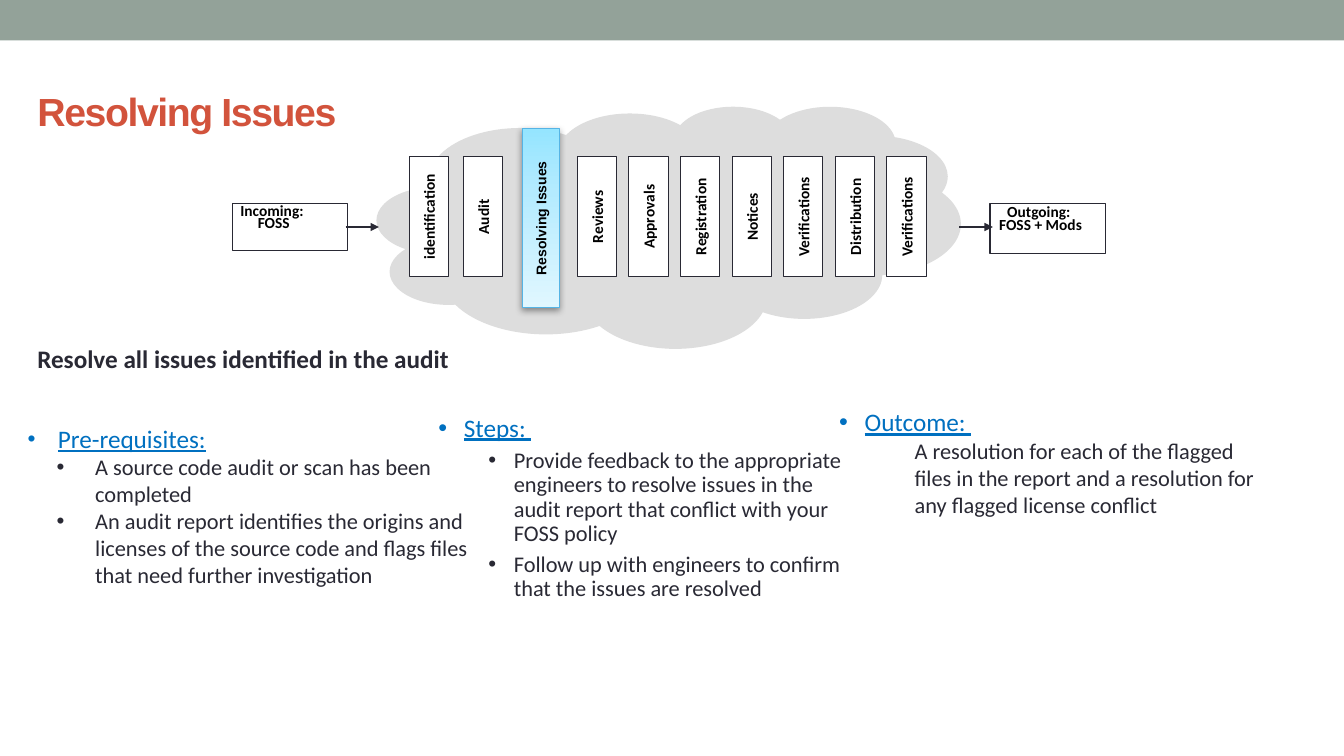
from copy import deepcopy
from lxml.etree import SubElement
from pptx import Presentation
from pptx.dml.color import RGBColor
from pptx.enum.shapes import MSO_CONNECTOR, MSO_SHAPE
from pptx.enum.text import MSO_ANCHOR, PP_ALIGN
from pptx.oxml.ns import qn
from pptx.util import Cm, Pt

HUES = {"band": "93A299", "cloud": "DDDDDD", "white": "FFFFFF", "ink": "292934",
        "black": "000000", "head": "D2533C", "blue": "0070C0", "edge": "55B4E5"}
GLOW = [(0, "95E5FF"), (0.35, "B4EBFF"), (1, "E0F7FF")]
STEPS = ["Reviews", "Approvals", "Registration", "Notices",
         "Verifications", "Distribution", "Verifications"]

HEAD = {"size": Pt(18), "underline": True}
BODY = {"size": Pt(16)}
LABEL = {"size": Pt(11), "bold": True}


def hue(name):
    return RGBColor.from_string(HUES[name])


def dress(item, values):
    """Set each named attribute of the item."""
    for name, value in values.items():
        setattr(item, name, value)


def write(para, text, color, font):
    run = para.add_run()
    run.text = text
    dress(run.font, {"name": "Calibri", **font})
    run.font.color.rgb = hue(color)
    return run


def draw(shapes, kind, box, fill, line=None):
    shape = shapes.add_shape(kind, *map(Cm, box))
    shape.shadow.inherit = False
    shape.fill.solid()
    shape.fill.fore_color.rgb = hue(fill)
    if line:
        shape.line.color.rgb = hue(line)
        shape.line.width = Pt(0.75)
    else:
        shape.line.fill.background()
    return shape


def add_bar(shapes, box, text, line="ink", font=LABEL):
    """Draw a box whose label reads upwards."""
    bar = draw(shapes, MSO_SHAPE.RECTANGLE, box, "white", line)
    frame = bar.text_frame
    dress(frame, {"margin_left": 0, "margin_right": 0, "margin_top": 0,
                  "margin_bottom": 0, "word_wrap": False,
                  "vertical_anchor": MSO_ANCHOR.MIDDLE})
    frame._txBody.bodyPr.set("vert", "vert270")
    para = frame.paragraphs[0]
    para.alignment = PP_ALIGN.CENTER
    write(para, text, "black", font)
    return bar


def light(bar):
    """Give the current step its gradient and shadow."""
    bar.fill.gradient()
    bar.fill.gradient_angle = 270
    stops = bar._element.spPr.find(qn("a:gradFill")).find(qn("a:gsLst"))
    stops.insert(1, deepcopy(stops[0]))
    for stop, (place, color) in zip(bar.fill.gradient_stops, GLOW):
        stop.position = place
        stop.color.rgb = RGBColor.from_string(color)
    cast = SubElement(bar._element.spPr.find(qn("a:effectLst")), qn("a:outerShdw"),
                      blurRad=str(Pt(5)), dist=str(Pt(1.6)), dir="5400000", rotWithShape="0")
    shade = SubElement(cast, qn("a:srgbClr"), val=HUES["black"])
    SubElement(shade, qn("a:alpha"), val="38000")


def add_end(shapes, box, lines, space, left, right):
    """Draw the box at one end of the flow."""
    frame = draw(shapes, MSO_SHAPE.RECTANGLE, box, "white", "ink").text_frame
    dress(frame, {"margin_left": Cm(left), "margin_right": Cm(right), "margin_top": Cm(0.1),
                  "word_wrap": True, "vertical_anchor": MSO_ANCHOR.TOP})
    for i, text in enumerate(lines):
        para = frame.add_paragraph() if i else frame.paragraphs[0]
        dress(para, {"alignment": PP_ALIGN.CENTER, "line_spacing": space})
        write(para, text, "black", LABEL)


def add_arrow(shapes, x, y, width):
    arrow = shapes.add_connector(MSO_CONNECTOR.STRAIGHT, Cm(x), Cm(y), Cm(x + width), Cm(y))
    dress(arrow.line, {"width": Pt(0.75)})
    arrow.line.color.rgb = hue("ink")
    SubElement(arrow.line._get_or_add_ln(), qn("a:tailEnd"), type="triangle")
    SubElement(arrow._element.spPr, qn("a:effectLst"))


def add_flow(slide, x, y):
    shapes = slide.shapes.add_group_shape().shapes
    cloud = draw(shapes, MSO_SHAPE.CLOUD_CALLOUT, (x + 3.65, y, 14.71, 6.1), "cloud")
    cloud.adjustments[0], cloud.adjustments[1] = -0.25, 0.16
    add_end(shapes, (x, y + 2.45, 2.9, 1.19), ["Incoming: ", "FOSS"], 0.65, 0.1, 0.9)
    add_end(shapes, (x + 19.1, y + 2.45, 2.9, 1.27), ["Outgoing: ", "FOSS + Mods"], 0.7, 0.05, 0.4)
    for left in (2.86, 18.33):
        add_arrow(shapes, x + left, y + 3.05, 0.84)
    light(add_bar(shapes, (x + 7.31, y + 0.58, 0.94, 4.5), "Resolving Issues", "edge",
                  {"name": "Arial", "size": Pt(10), "bold": True}))
    bars = [(4.46, "identification"), (5.83, "Audit")]
    bars += [(8.7 + 1.3 * i, step) for i, step in enumerate(STEPS)]
    for left, step in bars:
        add_bar(shapes, (x + left, y + 1.28, 0.99, 3.03), step)


def indent(para, left, hang, size=None):
    """Indent the paragraph, with a bullet if it hangs."""
    props = para._p.get_or_add_pPr()
    props.set("marL", str(Cm(left)))
    props.set("indent", str(-Cm(hang)))
    if hang:
        if size:
            SubElement(props, qn("a:buSzPct"), val=str(size * 1000))
        SubElement(props, qn("a:buFont"), typeface="Arial")
        SubElement(props, qn("a:buChar"), char="•")


def add_text(slide, box, values):
    frame = slide.shapes.add_textbox(*map(Cm, box)).text_frame
    dress(frame, {"word_wrap": True, **values})
    return frame


def add_list(slide, box, head, items, top, rest, inset=None, size=None):
    """Place a heading and its items; top and rest are (left, hang, spacing, before)."""
    frame = add_text(slide, box, inset or {})
    for i, text in enumerate([head, *items]):
        para = frame.add_paragraph() if i else frame.paragraphs[0]
        left, hang, space, before = rest if i else top
        dress(para, {"line_spacing": space, "space_before": Pt(before)})
        indent(para, left, hang, None if i else size)
        write(para, text, "ink" if i else "blue", BODY if i else HEAD)


def add_title(slide, box, text):
    title = slide.shapes.title
    dress(title, dict(zip(("left", "top", "width", "height"), map(Cm, box))))
    dress(title.text_frame, {"vertical_anchor": MSO_ANCHOR.MIDDLE, "word_wrap": True})
    para = title.text_frame.paragraphs[0]
    para.alignment = PP_ALIGN.LEFT
    run = write(para, text, "head", {"name": "Arial", "size": Pt(28), "bold": True})
    run.font._element.set("spc", "-100")


def main():
    deck = Presentation()
    dress(deck, {"slide_width": Cm(33.87), "slide_height": Cm(19.05)})
    slide = deck.slides.add_slide(deck.slide_layouts[5])
    draw(slide.shapes, MSO_SHAPE.RECTANGLE, (0, 0, 33.87, 1.02), "band")
    add_title(slide, (0.69, 1.42, 30.48, 2.74), "Resolving Issues")
    add_flow(slide, 5.85, 2.67)
    lead = add_text(slide, (0.69, 8.53, 20.12, 1.02), {})
    write(lead.paragraphs[0], "Resolve all issues identified in the audit", "ink",
          {"size": Pt(18), "bold": True})
    add_list(slide, (0, 9.78, 12.4, 8.28), "Pre-requisites:",
             ["A source code audit or scan has been completed",
              "An audit report identifies the origins and licenses of the source code "
              "and flags files that need further investigation"],
             (0.76, 0.76, 1.5, 10), (1.7, 0.97, 1.0, 0),
             {"margin_left": Cm(0.7), "margin_top": Cm(0.5),
              "margin_right": Cm(0.5), "margin_bottom": Cm(0.6)}, 90)
    top = (0.64, 0.64, 0.9, 10)
    add_list(slide, (10.8, 10.34, 11.23, 7.26), "Steps: ",
             ["Provide feedback to the appropriate engineers to resolve issues in the "
              "audit report that conflict with your FOSS policy",
              "Follow up with engineers to confirm that the issues are resolved"],
             top, (1.9, 0.64, 0.9, 5))
    add_list(slide, (20.9, 10.21, 11.23, 6.4), "Outcome: ",
             ["A resolution for each of the flagged files in the report and a resolution "
              "for any flagged license conflict"],
             top, (1.9, 0, 1.0, 0))
    deck.save("out.pptx")


if __name__ == "__main__":
    main()
